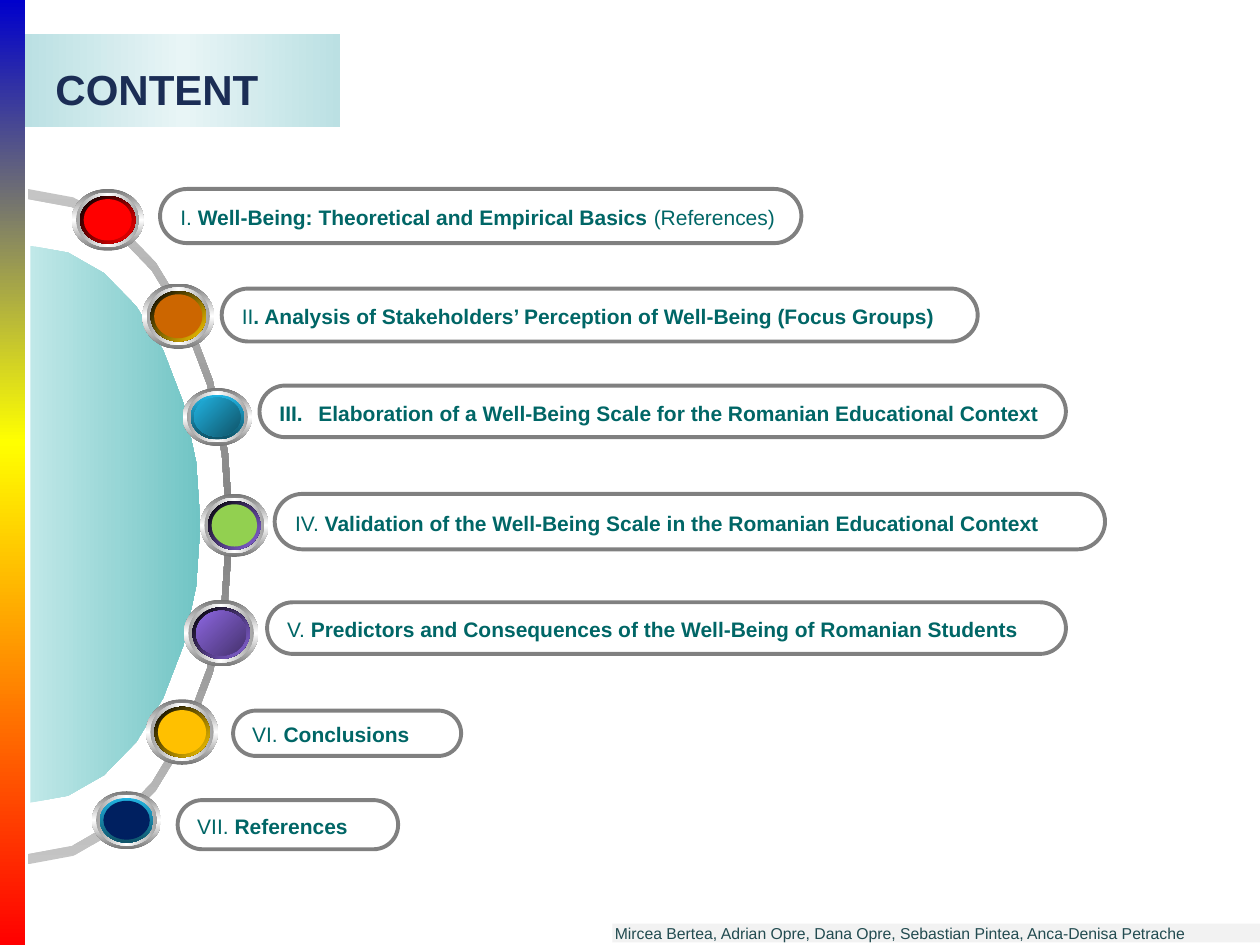
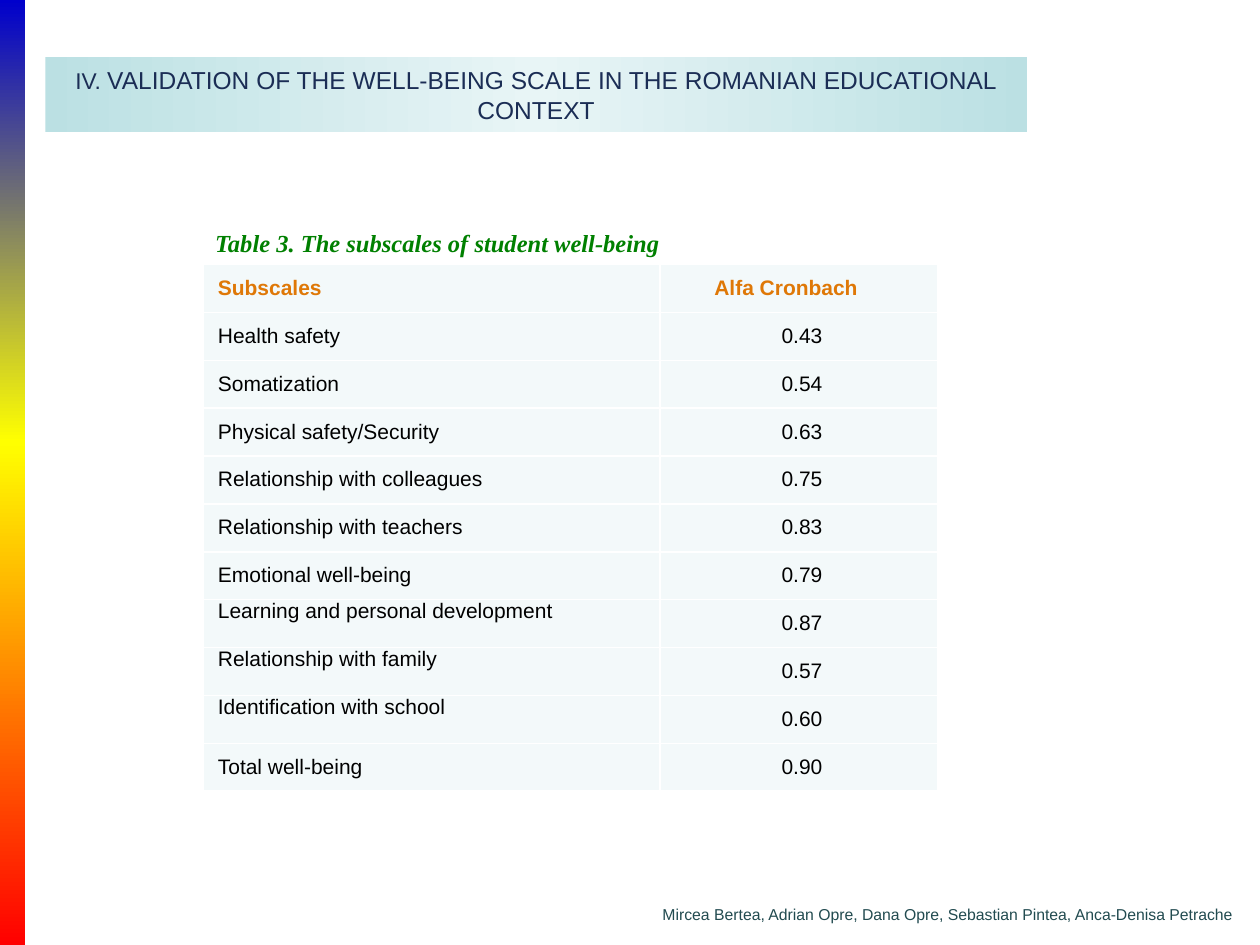
"""Build two slides on student well-being: the content overview and the subscale table."""
import copy
import math

import pptx
import pptx.dml.color
import pptx.enum.shapes
import pptx.enum.text
import pptx.oxml
import pptx.oxml.ns
import pptx.util
from pptx.util import Inches

SHAPE = pptx.enum.shapes.MSO_SHAPE
ALIGN = pptx.enum.text.PP_ALIGN
ANCHOR = pptx.enum.text.MSO_ANCHOR
qn = pptx.oxml.ns.qn

COLORS = {
    "title": "1B2D55", "band edge": "BBE0E3", "band middle": "E8F5F6",
    "stripe top": "0000CC", "stripe middle": "FFFF00", "stripe bottom": "FF0000",
    "topic": "006666", "outline": "808080", "footer": "224B50", "footer band": "F2F2F2",
    "arc end": "C5C5C5", "dome left": "C0E8E8", "dome right": "70C4C4",
    "rim": "767676", "ring": "A2A2A2", "white": "FFFFFF", "black": "000000",
    "red": "FF0000", "gold": "FFCC00", "orange": "CC6600", "amber": "FFC000",
    "blue": "21B3E1", "deep blue": "0F5368", "navy": "002060", "green": "92D050",
    "violet": "8D67E1", "deep violet": "45326D",
    "caption": "008000", "header": "DF7807", "cell": "F3F9FA",
}
BAND = ("band edge", "band middle", "band edge")
AUTHORS = "Mircea Bertea, Adrian Opre, Dana Opre, Sebastian Pintea, Anca-Denisa Petrache"

TOPICS = [
    ((1.27, 1.5, 5.09, 0.43), "I. ", "Well-Being: Theoretical and Empirical Basics ", "(References)"),
    ((1.76, 2.29, 6, 0.42), "II", ". Analysis of Stakeholders’ Perception of Well-Being (Focus Groups)", ""),
    ((2.06, 3.06, 6.4, 0.41), "", "Elaboration of a Well-Being Scale for the Romanian Educational Context", ""),
    ((2.18, 3.92, 6.59, 0.44), "IV. ", "Validation of the Well-Being Scale in the Romanian Educational Context", ""),
    ((2.12, 4.78, 6.34, 0.41), "V. ", "Predictors and Consequences of the Well-Being of Romanian Students", ""),
    ((1.85, 5.64, 1.81, 0.36), "VI. ", "Conclusions", ""),
    ((1.41, 6.35, 1.75, 0.39), "VII. ", "References", ""),
]
BUTTONS = [
    ((0.57, 1.5, 0.57, 0.49), ("black", "red"), 45, ("red",)),
    ((1.13, 2.25, 0.57, 0.52), ("black", "gold"), 45, ("orange",)),
    ((1.45, 3.08, 0.55, 0.46), ("blue", "deep blue"), 90, ("blue", "deep blue")),
    ((1.59, 3.92, 0.54, 0.5), ("black", "violet"), 45, ("green",)),
    ((1.46, 4.76, 0.59, 0.53), ("black", "violet"), 45, ("violet", "deep violet")),
    ((1.16, 5.55, 0.57, 0.52), ("black", "gold"), 45, ("amber",)),
    ((0.73, 6.28, 0.55, 0.46), ("blue", "deep blue"), 90, ("navy",)),
]
SUBSCALES = [
    ("Subscales", "Alfa Cronbach"),
    ("Health safety", "0.43"),
    ("Somatization", "0.54"),
    ("Physical safety/Security", "0.63"),
    ("Relationship with colleagues", "0.75"),
    ("Relationship with teachers", "0.83"),
    ("Emotional well-being", "0.79"),
    ("Learning and personal development", "0.87"),
    ("Relationship with family", "0.57"),
    ("Identification with school", "0.60"),
    ("Total well-being", "0.90"),
]
SINGLE_SPACED = SUBSCALES[7:10]


def color(name):
    return pptx.dml.color.RGBColor.from_string(COLORS[name])


def set_font(font, size, name, bold=None, italic=None, family="Arial"):
    font.size = pptx.util.Pt(size)
    font.name = family
    font.bold = bold
    font.italic = italic
    font.color.rgb = color(name)


def paint(shape, names, angle=0):
    """Fill with one colour, or with evenly spaced gradient stops at a clockwise angle."""
    if len(names) == 1:
        shape.fill.solid()
        shape.fill.fore_color.rgb = color(names[0])
        return
    shape.fill.gradient()
    shape.fill.gradient_angle = (360 - angle) % 360
    stop_list = shape._element.spPr.find(".//" + qn("a:gsLst"))
    for _ in names[2:]:
        stop_list.append(copy.deepcopy(stop_list[-1]))
    for index, (stop, name) in enumerate(zip(shape.fill.gradient_stops, names)):
        stop.color.rgb = color(name)
        stop.position = index / (len(names) - 1)


def add_filled(shapes, kind, box, names, angle=0):
    shape = shapes.add_shape(kind, *map(Inches, box))
    shape.shadow.inherit = False
    shape.line.fill.background()
    paint(shape, names, angle)
    return shape


def add_base_slide(presentation):
    """Add a title-only slide with the spectrum stripe at its left edge."""
    slide = presentation.slides.add_slide(presentation.slide_layouts[5])
    for top, height, names in ((0, 3.51, ("stripe top", "stripe middle")),
                               (3.51, 3.99, ("stripe middle", "stripe bottom"))):
        add_filled(slide.shapes, SHAPE.RECTANGLE, (0, top, 0.2, height), names, 90)
    return slide


def set_title(slide, box, parts, alignment, bold=None):
    """Place the title on its band; parts are pairs of text and size."""
    title = slide.shapes.title
    title.left, title.top, title.width, title.height = map(Inches, box)
    paint(title, BAND)
    frame = title.text_frame
    frame.auto_size = pptx.enum.text.MSO_AUTO_SIZE.NONE
    frame.word_wrap = True
    frame.vertical_anchor = ANCHOR.MIDDLE
    paragraph = frame.paragraphs[0]
    paragraph.alignment = alignment
    for text, size in parts:
        run = paragraph.add_run()
        run.text = text
        set_font(run.font, size, "title", bold)
    return frame


def add_text(slide, box, text, wrap=True):
    text_box = slide.shapes.add_textbox(*map(Inches, box))
    text_box.text_frame.word_wrap = wrap
    paragraph = text_box.text_frame.paragraphs[0]
    paragraph.text = text
    return text_box, paragraph


def add_footer(slide, box):
    footer, paragraph = add_text(slide, box, AUTHORS)
    set_font(paragraph.font, 9, "footer")
    return footer


def half_ellipse(center, radii, steps=14):
    """Return points down the right half of an ellipse."""
    angles = [math.pi * (step / steps - 0.5) for step in range(steps + 1)]
    return [(center[0] + radii[0] * math.cos(angle), center[1] + radii[1] * math.sin(angle))
            for angle in angles]


def add_outline(slide, points, names, angle):
    start, *others = [(Inches(x), Inches(y)) for x, y in points]
    builder = slide.shapes.build_freeform(*start)
    builder.add_line_segments(others, close=True)
    shape = builder.convert_to_shape()
    shape.shadow.inherit = False
    shape.line.fill.background()
    paint(shape, names, angle)


def add_button(slide, rim_box, bezel, bezel_angle, core):
    """Stack concentric ellipses into one metallic button."""
    left, top, width, height = rim_box
    layers = [
        (1, ("rim", "white", "rim"), 90),
        (0.88, ("ring", "white", "ring"), 0),
        (0.77, bezel, bezel_angle),
        (0.67, core, 45),
    ]
    group = slide.shapes.add_group_shape()
    for scale, names, angle in layers:
        inset = (1 - scale) / 2
        box = (left + width * inset, top + height * inset, width * scale, height * scale)
        add_filled(group.shapes, SHAPE.OVAL, box, names, angle)


def add_topic(slide, box, numeral, heading, note):
    """Add a pill; a topic without a typed numeral gets automatic number III."""
    pill = slide.shapes.add_shape(SHAPE.ROUNDED_RECTANGLE, *map(Inches, box))
    pill.adjustments[0] = 0.5
    pill.shadow.inherit = False
    pill.fill.background()
    pill.line.color.rgb = color("outline")
    pill.line.width = pptx.util.Pt(2.25)
    frame = pill.text_frame
    frame.word_wrap = True
    frame.margin_right = 0
    frame.margin_top = Inches(0.07)
    frame.vertical_anchor = ANCHOR.MIDDLE
    paragraph = frame.paragraphs[0]
    paragraph.alignment = ALIGN.LEFT
    if not numeral:
        properties = paragraph._p.get_or_add_pPr()
        properties.set("marL", str(Inches(0.31)))
        properties.set("indent", str(-Inches(0.31)))
        number = pptx.oxml.parse_xml(
            f'<a:buAutoNum {pptx.oxml.ns.nsdecls("a")} type="romanUcPeriod" startAt="3"/>')
        properties.append(number)
    for text, bold in ((numeral, False), (heading, True), (note, False)):
        if text:
            run = paragraph.add_run()
            run.text = text
            set_font(run.font, 12, "topic", bold)


def set_borders(cell):
    properties = cell._tc.get_or_add_tcPr()
    for index, side in enumerate(("lnL", "lnR", "lnT", "lnB")):
        properties.insert(index, pptx.oxml.parse_xml(
            f'<a:{side} {pptx.oxml.ns.nsdecls("a")} w="12700"><a:solidFill>'
            f'<a:srgbClr val="{COLORS["white"]}"/></a:solidFill></a:{side}>'))


def add_subscale_table(slide):
    frame = slide.shapes.add_table(len(SUBSCALES), 2, *map(Inches, (1.61, 2.1, 5.83, 4.18)))
    table = frame.table
    table.first_row = table.horz_banding = False
    for column, width in zip(table.columns, (3.63, 2.2)):
        column.width = Inches(width)
    for row_index, row in enumerate(SUBSCALES):
        table.rows[row_index].height = Inches(0.38)
        for column_index, text in enumerate(row):
            is_header = row_index == 0
            is_value = column_index == 1
            cell = table.cell(row_index, column_index)
            cell.margin_left = cell.margin_right = Inches(0.07)
            cell.margin_top = cell.margin_bottom = 0
            cell.fill.solid()
            cell.fill.fore_color.rgb = color("cell")
            set_borders(cell)
            paragraph = cell.text_frame.paragraphs[0]
            paragraph.text = text
            paragraph.alignment = ALIGN.CENTER if is_value and not is_header else ALIGN.LEFT
            paragraph.line_spacing = 1 if row in SINGLE_SPACED and not is_value else 1.5
            indent = 0.36 if is_value and is_header else 0.05
            paragraph._p.get_or_add_pPr().set("marL", str(Inches(indent)))
            set_font(paragraph.font, 12, "header" if is_header else "black", is_header)


def build_content_slide(presentation):
    slide = add_base_slide(presentation)
    frame = set_title(slide, (0.2, 0.27, 2.5, 0.74), [("CONTENT", 24)], ALIGN.LEFT, True)
    frame.margin_left = Inches(0.24)
    frame.margin_top = Inches(0.17)
    center = (0.22, 4.18)
    arc = half_ellipse(center, (1.63, 2.68)) + half_ellipse(center, (1.58, 2.6))[::-1]
    add_outline(slide, arc, ("arc end", "outline", "arc end"), 90)
    add_outline(slide, half_ellipse((0.24, 4.16), (1.35, 2.21)), ("dome left", "dome right"), 0)
    for button in BUTTONS:
        add_button(slide, *button)
    for topic in TOPICS:
        add_topic(slide, *topic)
    footer = add_footer(slide, (4.86, 7.33, 5.14, 0.15))
    paint(footer, ("footer band",))
    footer.text_frame.margin_left = footer.text_frame.margin_right = Inches(0.02)
    footer.text_frame.margin_top = footer.text_frame.margin_bottom = 0


def build_validation_slide(presentation):
    slide = add_base_slide(presentation)
    heading = "VALIDATION OF THE WELL-BEING SCALE IN THE ROMANIAN EDUCATIONAL CONTEXT"
    set_title(slide, (0.36, 0.45, 7.79, 0.6), [("IV. ", 13), (heading, 14)], ALIGN.CENTER)
    add_subscale_table(slide)
    _, caption = add_text(slide, (1.61, 1.64, 3.89, 0.45),
                          "Table 3. The subscales of student well-being", wrap=False)
    caption.line_spacing = 1.5
    set_font(caption.font, 14, "caption", True, True, "Times New Roman")
    add_footer(slide, (5.16, 7.13, 4.84, 0.25))


def main():
    presentation = pptx.Presentation()
    presentation.slide_width = Inches(10)
    presentation.slide_height = Inches(7.5)
    build_content_slide(presentation)
    build_validation_slide(presentation)
    presentation.save("out.pptx")


if __name__ == "__main__":
    main()
